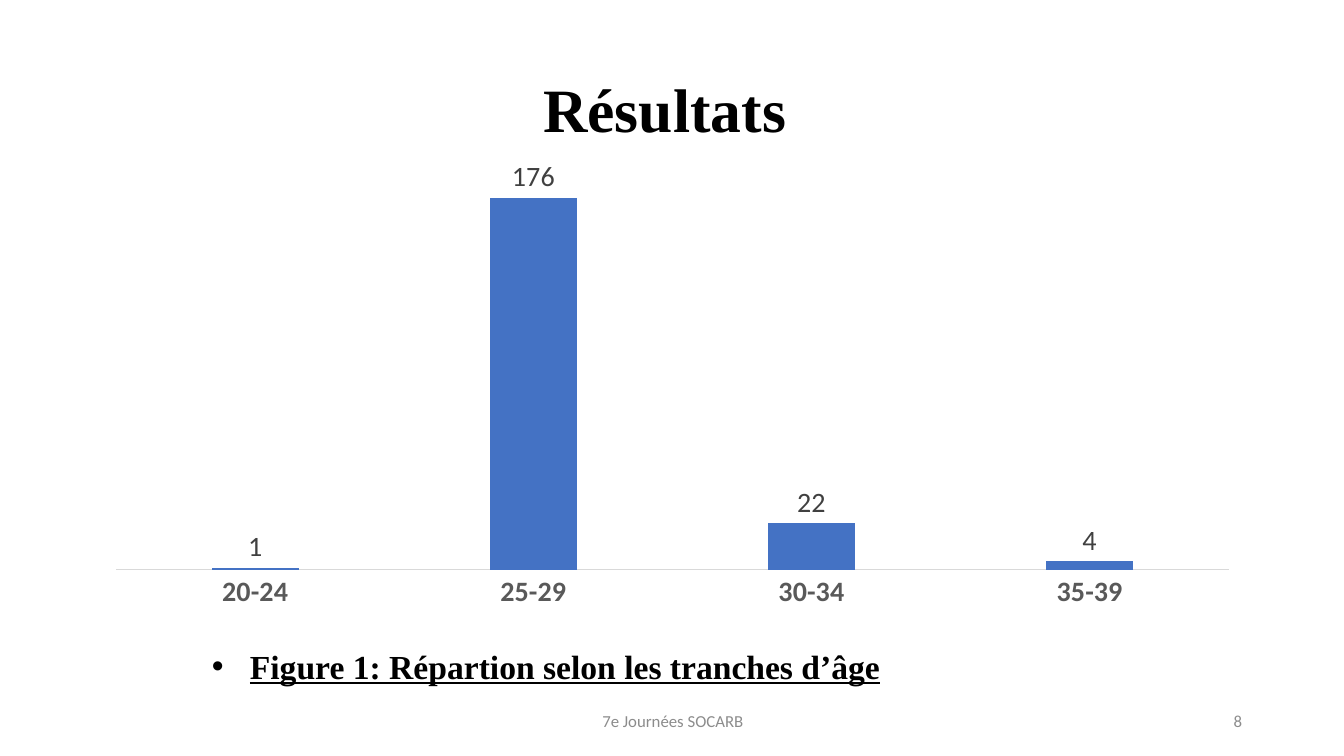
from lxml import etree
from pptx import Presentation
from pptx import util as u
from pptx.chart.data import CategoryChartData
from pptx.dml.color import RGBColor
from pptx.enum import chart as ch, text
from pptx.oxml import parse_xml
from pptx.oxml.ns import nsdecls, qn

BLACK = RGBColor(0x00, 0x00, 0x00)
BLUE = RGBColor(0x44, 0x72, 0xC4)
AXIS_TEXT = RGBColor(0x59, 0x59, 0x59)
LABEL_TEXT = RGBColor(0x40, 0x40, 0x40)
AXIS_LINE = RGBColor(0xD9, 0xD9, 0xD9)
GREY = RGBColor(0x8C, 0x8C, 0x8C)
SERIF, SANS = "Times New Roman", "Calibri"

TITLE = "Résultats "
AGES = {"20-24": 1, "25-29": 176, "30-34": 22, "35-39": 4}
CAPTION = "Figure 1: Répartion selon les tranches d’âge"
FOOTER, PAGE = "7e Journées SOCARB", "8"

# left, top, width, height in px
TITLE_BOX = (93, 40, 1159, 146)
CHART_BOX = (93, 138, 1159, 480)
PLOT_BOX = (116, 147, 1112, 422)
CAPTION_BOX = (202, 641, 843, 50)
PAGE_BOX = (950, 701, 302, 40)
FOOTER_BOX = (446, 701, 454, 40)
BULLET_INDENT = 38


def px(n):
    return u.Emu(round(n * 914400 / 100.8))


def style(font, name, size, color, bold=False):
    font.name, font.size, font.bold = name, u.Pt(size), bold
    font.color.rgb = color


def add_text(s, box, words, align, name, size, color, bold=False):
    tf = s.shapes.add_textbox(*map(px, box)).text_frame
    tf.word_wrap = True
    tf.vertical_anchor = text.MSO_ANCHOR.MIDDLE
    p = tf.paragraphs[0]
    p.text, p.alignment = words, align
    style(p.runs[0].font, name, size, color, bold)
    return p


def add_title(s):
    sp = s.shapes.title
    sp.left, sp.top, sp.width, sp.height = map(px, TITLE_BOX)
    tf = sp.text_frame
    tf.text = TITLE
    tf.vertical_anchor = text.MSO_ANCHOR.MIDDLE
    p = tf.paragraphs[0]
    p.alignment, p.line_spacing = text.PP_ALIGN.CENTER, 0.9
    style(p.runs[0].font, SERIF, 44, BLACK, True)


def place_plot(chart):
    """Fix the inner plot area inside the chart frame."""
    left, top, width, height = CHART_BOX
    x, y, w, h = PLOT_BOX
    shares = {"x": (x - left) / width, "y": (y - top) / height,
              "w": w / width, "h": h / height}
    area = chart._chartSpace.chart.plotArea
    for old in area.findall(qn("c:layout")):
        area.remove(old)
    layout = parse_xml(f"<c:layout {nsdecls('c')}><c:manualLayout/></c:layout>")
    values = [("layoutTarget", "inner"), ("xMode", "edge"), ("yMode", "edge")]
    values += [(k, f"{v:.2f}") for k, v in shares.items()]
    for tag, val in values:
        etree.SubElement(layout[0], qn(f"c:{tag}")).set("val", val)
    area.insert(0, layout)


def add_age_chart(s):
    data = CategoryChartData(number_format="0")
    data.categories = list(AGES)
    data.add_series("Series 1", list(AGES.values()))
    chart = s.shapes.add_chart(ch.XL_CHART_TYPE.COLUMN_CLUSTERED,
                               *map(px, CHART_BOX), data).chart
    chart.has_legend = chart.has_title = False
    style(chart.font, SANS, 10, BLACK)

    plot = chart.plots[0]
    plot.gap_width, plot.overlap, plot.vary_by_categories = 219, -27, False
    fill = plot.series[0].format.fill
    fill.solid()
    fill.fore_color.rgb = BLUE
    plot.has_data_labels = True
    labels = plot.data_labels
    labels.show_value = True
    labels.position = ch.XL_LABEL_POSITION.OUTSIDE_END
    labels.number_format, labels.number_format_is_linked = "0", False
    style(labels.font, SANS, 20, LABEL_TEXT)

    ages, counts = chart.category_axis, chart.value_axis
    ages.major_tick_mark = ages.minor_tick_mark = ch.XL_TICK_MARK.NONE
    ages.format.line.color.rgb = AXIS_LINE
    ages.format.line.width = u.Pt(0.75)
    style(ages.tick_labels.font, SANS, 20, AXIS_TEXT, True)
    counts.minimum_scale, counts.maximum_scale = 0, 200
    counts.has_major_gridlines = counts.visible = False
    place_plot(chart)


def add_caption(s):
    p = add_text(s, CAPTION_BOX, CAPTION, text.PP_ALIGN.LEFT, SERIF, 24, BLACK, True)
    p.runs[0].font.underline = True
    ppr = p._p.get_or_add_pPr()
    ppr.set("marL", str(px(BULLET_INDENT)))
    ppr.set("indent", str(-px(BULLET_INDENT)))
    etree.SubElement(ppr, qn("a:buFont")).set("typeface", "Arial")
    etree.SubElement(ppr, qn("a:buChar")).set("char", "•")


def main():
    prs = Presentation()
    prs.slide_width, prs.slide_height = px(1344), px(756)
    s = prs.slides.add_slide(prs.slide_layouts[5])
    add_title(s)
    add_age_chart(s)
    add_caption(s)
    add_text(s, PAGE_BOX, PAGE, text.PP_ALIGN.RIGHT, SANS, 12, GREY)
    add_text(s, FOOTER_BOX, FOOTER, text.PP_ALIGN.CENTER, SANS, 12, GREY)
    prs.save("out.pptx")


if __name__ == "__main__":
    main()
